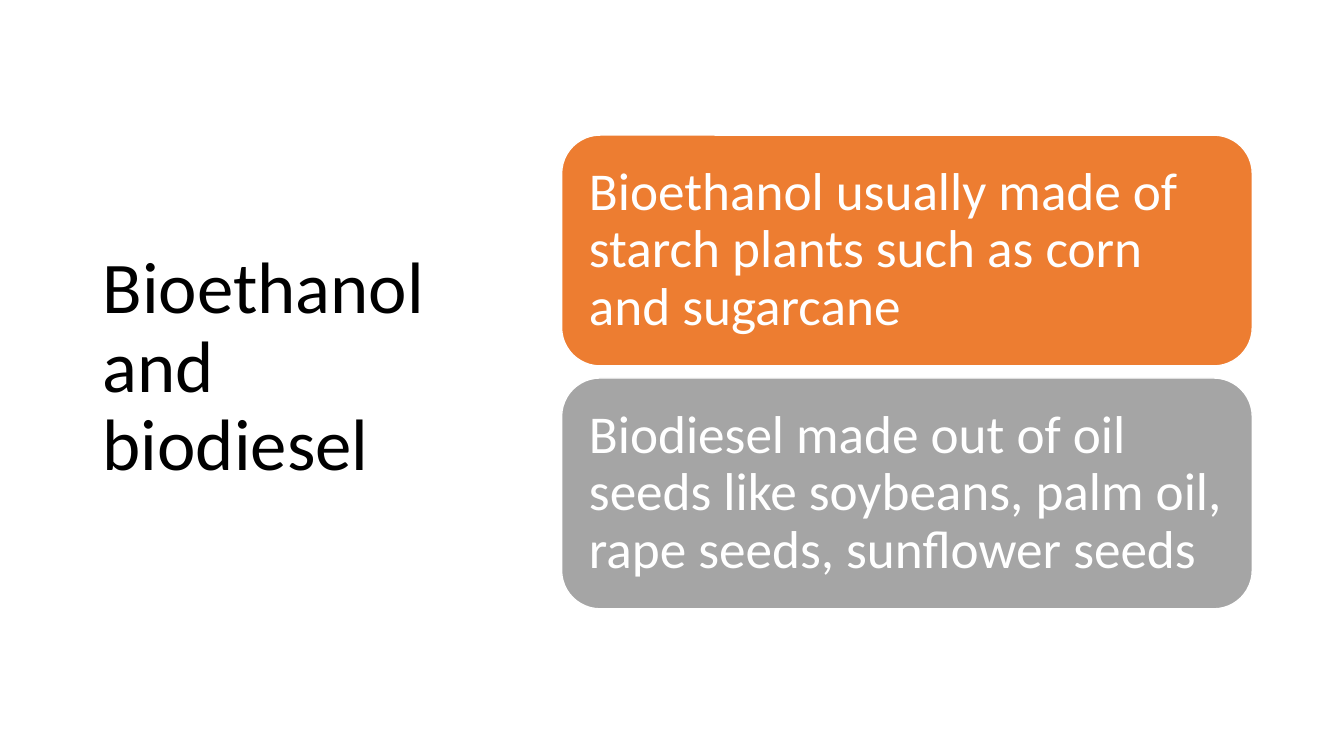
import dataclasses

import pptx
import pptx.dml.color
import pptx.enum.shapes
import pptx.enum.text
import pptx.shapes.autoshape
import pptx.slide
import pptx.util

EMU_PER_PX = 9144


@dataclasses.dataclass(frozen=True)
class Theme:
    font: str = "Calibri"
    title_size: int = 52
    card_size: int = 38
    line_spacing: float = 0.9
    black: str = "000000"
    white: str = "FFFFFF"
    orange: str = "ED7D31"
    grey: str = "A5A5A5"


THEME = Theme()


@dataclasses.dataclass(frozen=True)
class Card:
    text: str
    fill: str


CARDS = (
    Card("Bioethanol usually made of starch plants such as corn and sugarcane", THEME.orange),
    Card("Biodiesel made out of oil seeds like soybeans, palm oil, rape seeds, sunflower seeds", THEME.grey),
)
CARD_LEFT, CARD_TOP = 557, 134
CARD_WIDTH, CARD_HEIGHT, CARD_PITCH = 685, 229, 241
CARD_INSET = 16


def px(length: int) -> pptx.util.Emu:
    return pptx.util.Emu(length * EMU_PER_PX)


def rgb(value: str) -> pptx.dml.color.RGBColor:
    return pptx.dml.color.RGBColor.from_string(value)


def apply_format(target: object, values: dict[str, object]) -> None:
    for name, value in values.items():
        setattr(target, name, value)


def write_text(shape: pptx.shapes.autoshape.Shape, text: str, size: int, color: str) -> None:
    frame = shape.text_frame
    apply_format(frame, {
        "word_wrap": True,
        "vertical_anchor": pptx.enum.text.MSO_ANCHOR.MIDDLE,
    })
    paragraph = frame.paragraphs[0]
    apply_format(paragraph, {
        "text": text,
        "alignment": pptx.enum.text.PP_ALIGN.LEFT,
        "line_spacing": THEME.line_spacing,
    })
    font = paragraph.runs[0].font
    apply_format(font, {"name": THEME.font, "size": pptx.util.Pt(size)})
    font.color.rgb = rgb(color)


def add_title(slide: pptx.slide.Slide, text: str) -> None:
    title = slide.shapes.add_textbox(px(92), px(61), px(369), px(609))
    write_text(title, text, THEME.title_size, THEME.black)


def add_card(slide: pptx.slide.Slide, card: Card, top: int) -> None:
    shape = slide.shapes.add_shape(
        pptx.enum.shapes.MSO_SHAPE.ROUNDED_RECTANGLE,
        px(CARD_LEFT), px(top), px(CARD_WIDTH), px(CARD_HEIGHT),
    )
    shape.shadow.inherit = False
    shape.fill.solid()
    shape.fill.fore_color.rgb = rgb(card.fill)
    shape.line.color.rgb = rgb(THEME.white)
    shape.line.width = pptx.util.Pt(1)
    sides = ("left", "top", "right", "bottom")
    apply_format(shape.text_frame, {f"margin_{side}": px(CARD_INSET) for side in sides})
    write_text(shape, card.text, THEME.card_size, THEME.white)


def main() -> None:
    presentation = pptx.Presentation()
    apply_format(presentation, {"slide_width": px(1333), "slide_height": px(750)})
    slide = presentation.slides.add_slide(presentation.slide_layouts[6])
    add_title(slide, "Bioethanol and biodiesel")
    for index, card in enumerate(CARDS):
        add_card(slide, card, CARD_TOP + index * CARD_PITCH)
    presentation.save("out.pptx")


if __name__ == "__main__":
    main()
